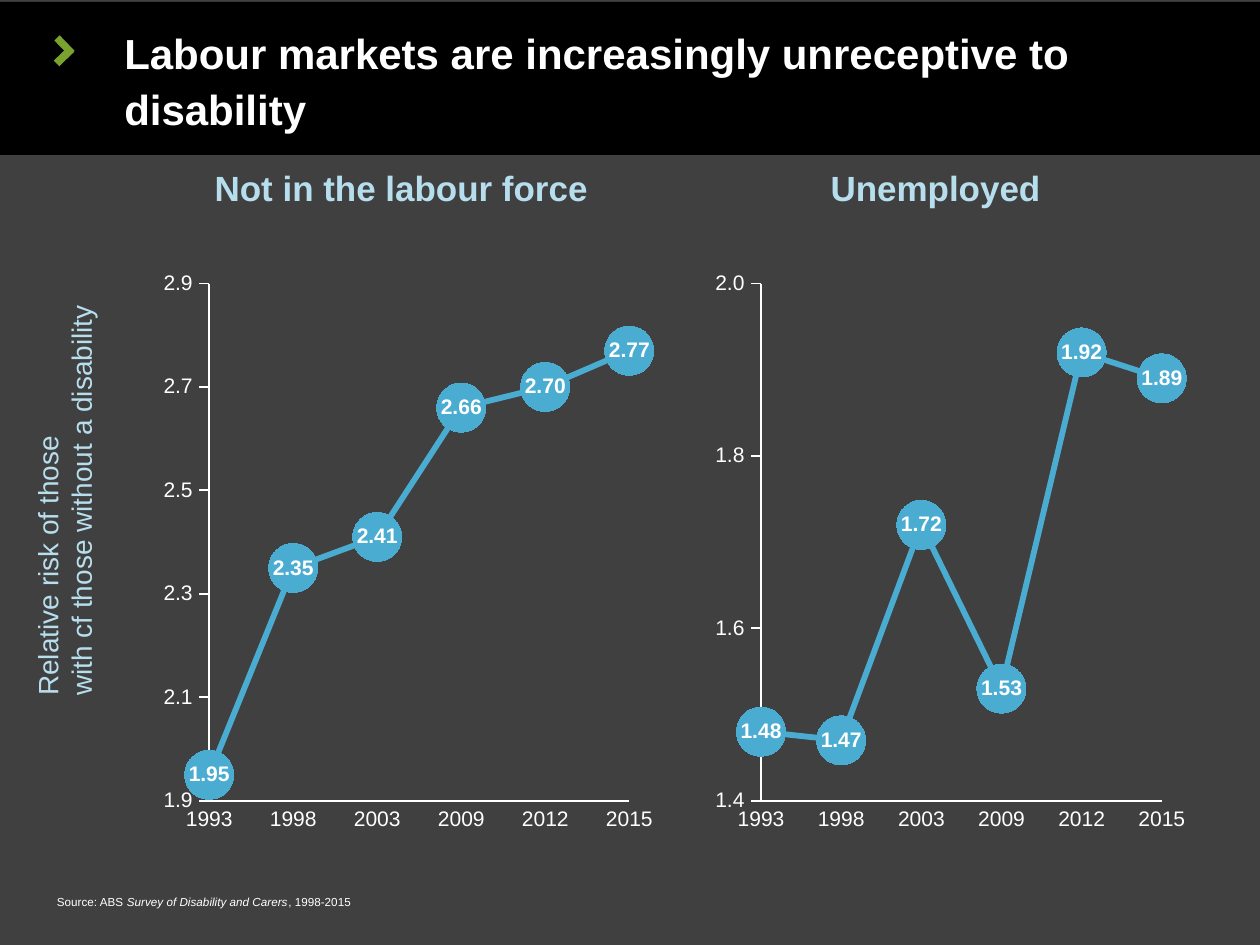
from lxml import etree
from pptx import Presentation
from pptx.chart.data import CategoryChartData
from pptx.dml.color import RGBColor
from pptx.enum.chart import XL_CHART_TYPE, XL_LABEL_POSITION, XL_MARKER_STYLE, XL_TICK_MARK
from pptx.enum.shapes import MSO_SHAPE
from pptx.enum.text import MSO_ANCHOR, PP_ALIGN
from pptx.util import Pt

LINE_MARKERS = XL_CHART_TYPE.LINE_MARKERS
LABEL_CENTER = XL_LABEL_POSITION.CENTER
CIRCLE = XL_MARKER_STYLE.CIRCLE
TICK_NONE, TICK_OUTSIDE = XL_TICK_MARK.NONE, XL_TICK_MARK.OUTSIDE
RECTANGLE = MSO_SHAPE.RECTANGLE
TOP, MIDDLE = MSO_ANCHOR.TOP, MSO_ANCHOR.MIDDLE
LEFT, CENTER = PP_ALIGN.LEFT, PP_ALIGN.CENTER

BLACK = RGBColor(0x00, 0x00, 0x00)
WHITE = RGBColor(0xFF, 0xFF, 0xFF)
CHARCOAL = RGBColor(0x40, 0x40, 0x40)
PALE_BLUE = RGBColor(0xB7, 0xDE, 0xED)
BLUE = RGBColor(0x4B, 0xAC, 0xD2)
GREEN = RGBColor(0x7A, 0xA2, 0x2F)

CHART_NAMESPACE = "http://schemas.openxmlformats.org/drawingml/2006/chart"
PLOT_AREA = {"x": 0.11, "y": 0.04, "w": 0.82, "h": 0.89}
YEARS = ["1993", "1998", "2003", "2009", "2012", "2015"]

# Heading and chart boxes, axis range and values of each panel
PANELS = [
    {"heading": "Not in the labour force", "heading_box": (57, 67.7, 230, 43),
     "chart_box": (65.5, 111.6, 219.6, 249.1), "range": (1.9, 2.9),
     "values": [1.95, 2.35, 2.41, 2.66, 2.70, 2.77]},
    {"heading": "Unemployed", "heading_box": (286, 67.7, 230, 43),
     "chart_box": (303.1, 111.6, 209.5, 249.1), "range": (1.4, 2.0),
     "values": [1.48, 1.47, 1.72, 1.53, 1.92, 1.89]},
]


def points(box):
    return [Pt(length) for length in box]


def format_font(font, size, color, **values):
    font.color.rgb = color
    for name, value in {"name": "Arial", "size": Pt(size), **values}.items():
        setattr(font, name, value)


def add_rectangle(slide, box, color, rotation=0):
    shape = slide.shapes.add_shape(RECTANGLE, *points(box))
    shape.shadow.inherit = False
    shape.fill.solid()
    shape.fill.fore_color.rgb = color
    shape.line.fill.background()
    shape.rotation = rotation
    return shape


def add_label(slide, box, lines, size, color, alignment=LEFT, rotation=0, bold=False):
    """Each line is a list of (text, italic) runs."""
    shape = slide.shapes.add_textbox(*points(box))
    shape.rotation = rotation
    frame = shape.text_frame
    frame.word_wrap = False
    for index, runs in enumerate(lines):
        paragraph = frame.add_paragraph() if index else frame.paragraphs[0]
        paragraph.alignment = alignment
        for text, italic in runs:
            run = paragraph.add_run()
            run.text = text
            format_font(run.font, size, color, bold=bold, italic=italic)


def add_title_band(slide, box):
    left, top, width, height = box
    band = add_rectangle(slide, box, BLACK)
    frame = band.text_frame
    margins = {"margin_left": 53.3, "margin_top": 8.6,
               "margin_right": 21.6, "margin_bottom": 8.6}
    for name, value in margins.items():
        setattr(frame, name, Pt(value))
    frame.word_wrap = True
    frame.vertical_anchor = MIDDLE
    paragraph = frame.paragraphs[0]
    paragraph.alignment = LEFT
    paragraph.line_spacing = Pt(24)
    run = paragraph.add_run()
    run.text = "Labour markets are increasingly unreceptive to disability"
    format_font(run.font, 18, WHITE, bold=True)

    # Chevron made of two tilted bars
    add_rectangle(slide, (left + 23, top + 21.6, 8.9, 3.4), GREEN, 316.1)
    add_rectangle(slide, (left + 23, top + 17.2, 9.2, 3.2), GREEN, 46.1)


def set_plot_layout(chart):
    """Fix the inner plot area and start the line on the value axis."""
    def tag(name):
        return f"{{{CHART_NAMESPACE}}}{name}"

    plot_area = chart.plots[0]._element.getparent()
    for old in plot_area.findall(tag("layout")):
        plot_area.remove(old)
    layout = etree.Element(tag("layout"))
    manual = etree.SubElement(layout, tag("manualLayout"))
    settings = {"layoutTarget": "inner", "xMode": "edge", "yMode": "edge", **PLOT_AREA}
    for name, value in settings.items():
        etree.SubElement(manual, tag(name)).set("val", str(value))
    plot_area.insert(0, layout)

    value_axis = plot_area.find(tag("valAx"))
    for old in value_axis.findall(tag("crossBetween")):
        value_axis.remove(old)
    crossing = etree.Element(tag("crossBetween"))
    crossing.set("val", "midCat")
    value_axis.find(tag("crosses")).addnext(crossing)


def add_line_chart(slide, box, values, value_range):
    data = CategoryChartData()
    data.categories = YEARS
    data.add_series("Series 1", values)
    chart = slide.shapes.add_chart(LINE_MARKERS, *points(box), data).chart
    chart.has_legend = False
    chart.has_title = False
    format_font(chart.font, 10, BLACK)

    # Axes
    for axis, tick in ((chart.category_axis, TICK_NONE), (chart.value_axis, TICK_OUTSIDE)):
        axis.has_major_gridlines = False
        axis.major_tick_mark = tick
        axis.minor_tick_mark = TICK_NONE
        axis.format.line.color.rgb = WHITE
        axis.format.line.width = Pt(0.75)
        format_font(axis.tick_labels.font, 9, WHITE)
    value_axis = chart.value_axis
    value_axis.minimum_scale, value_axis.maximum_scale = value_range
    value_axis.major_unit = 0.2
    value_axis.tick_labels.number_format = "0.0"
    value_axis.tick_labels.number_format_is_linked = False

    # Line and markers
    plot = chart.plots[0]
    plot.vary_by_categories = False
    series = plot.series[0]
    series.smooth = False
    series.format.line.color.rgb = BLUE
    series.format.line.width = Pt(2.5)
    marker = series.marker
    marker.style = CIRCLE
    marker.size = 21
    marker.format.fill.solid()
    marker.format.fill.fore_color.rgb = BLUE
    marker.format.line.color.rgb = BLUE

    # Value labels
    labels = series.data_labels
    label_format = {"show_value": True, "position": LABEL_CENTER,
                    "number_format": "0.00", "number_format_is_linked": False}
    for name, value in label_format.items():
        setattr(labels, name, value)
    format_font(labels.font, 9, WHITE, bold=True)
    set_plot_layout(chart)


def add_panel(slide, panel):
    add_label(slide, panel["heading_box"], [[(panel["heading"], False)]],
              15, PALE_BLUE, CENTER, bold=True)
    add_line_chart(slide, panel["chart_box"], panel["values"], panel["range"])


def main():
    presentation = Presentation()
    presentation.slide_width, presentation.slide_height = Pt(540), Pt(405)
    slide = presentation.slides.add_slide(presentation.slide_layouts[6])
    slide.background.fill.solid()
    slide.background.fill.fore_color.rgb = CHARCOAL

    add_title_band(slide, (0, 0.8, 540, 65.6))
    for panel in PANELS:
        add_panel(slide, panel)

    # Shared axis title and source line
    add_label(slide, (-64, 195.8, 183, 36),
              [[("Relative risk of those", False)],
               [("with cf those without a disability", False)]],
              12, PALE_BLUE, rotation=270)
    add_label(slide, (17.3, 380, 140.4, 13.7),
              [[("Source: ABS ", False), ("Survey of Disability and Carers", True),
                (", 1998-2015", False)]], 5, WHITE)
    presentation.save("out.pptx")


if __name__ == "__main__":
    main()
